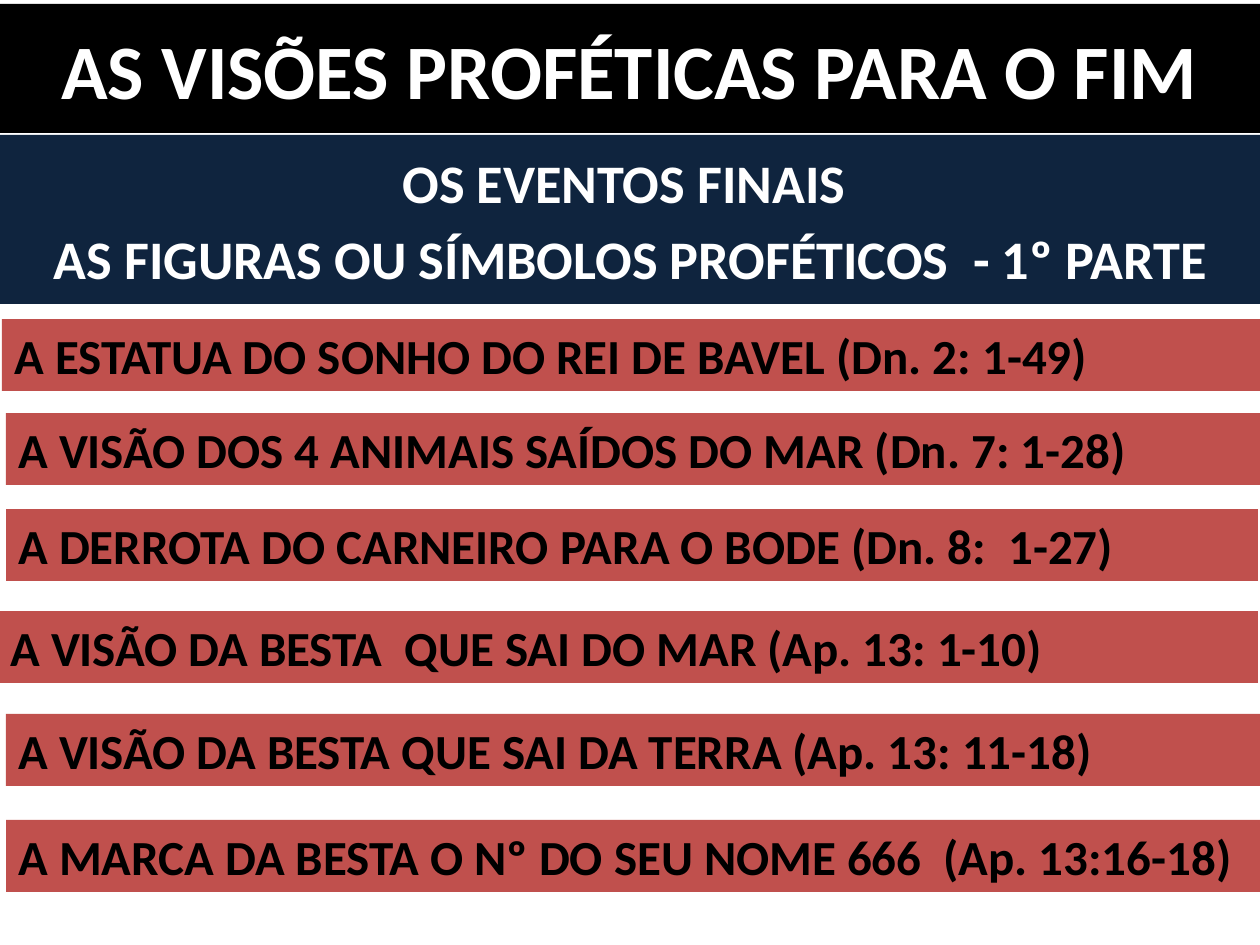
from dataclasses import dataclass

from pptx import Presentation
from pptx.dml.color import RGBColor as RGB
from pptx.enum.shapes import MSO_SHAPE as SHAPE
from pptx.enum.text import MSO_ANCHOR as ANCHOR, MSO_AUTO_SIZE as FIT, PP_ALIGN as ALIGN
from pptx.util import Emu, Pt

EMU_PER_PX = 914400 / 126
WIDTH, HEIGHT = 1260, 945


def px(n):
    """Turn whole px into EMU."""
    return Emu(round(n * EMU_PER_PX))


@dataclass(frozen=True)
class Theme:
    """Colours, font and type sizes of the slide."""
    font: str = "Calibri"
    black: RGB = RGB(0, 0, 0)
    white: RGB = RGB(255, 255, 255)
    navy: RGB = RGB(0x0F, 0x24, 0x3E)
    red: RGB = RGB(0xC0, 0x50, 0x4D)
    title: int = 44
    subtitle: int = 31
    item: int = 28


class Deck:
    """Holds the theme and current slide and draws each kind of element."""

    def __init__(self, prs, theme):
        self.theme = theme
        self.s = prs.slides.add_slide(prs.slide_layouts[6])

    def band(self, box, fill, lines, size, color, align, anchor, before=0):
        """Add a filled rectangle with bold lines of text."""
        sp = self.s.shapes.add_shape(SHAPE.RECTANGLE, *map(px, box))
        sp.shadow.inherit = False
        sp.fill.solid()
        sp.fill.fore_color.rgb = fill
        sp.line.fill.background()
        tf = sp.text_frame
        tf.word_wrap = True
        tf.vertical_anchor = anchor
        for i, line in enumerate(lines):
            p = tf.add_paragraph() if i else tf.paragraphs[0]
            p.alignment = align
            p.space_before = Pt(before)
            r = p.add_run()
            r.text = line
            r.font.name = self.theme.font
            r.font.size = Pt(size)
            r.font.bold = True
            r.font.color.rgb = color
        return tf

    def heading(self, top, height, fill, lines, size, before=0):
        """Add a full-width centred heading."""
        self.band((0, top, WIDTH, height), fill, lines, size, self.theme.white,
                  ALIGN.CENTER, ANCHOR.MIDDLE, before)

    def item(self, left, top, width, text, align=ALIGN.JUSTIFY):
        """Add one red list bar."""
        t = self.theme
        tf = self.band((left, top, width, 72), t.red, [text], t.item, t.black,
                       align, ANCHOR.TOP)
        tf.auto_size = FIT.SHAPE_TO_FIT_TEXT


def main():
    """Build and save the slide."""
    prs = Presentation()
    prs.slide_width, prs.slide_height = px(WIDTH), px(HEIGHT)
    theme = Theme()
    deck = Deck(prs, theme)
    deck.heading(4, 129, theme.black, ["AS VISÕES PROFÉTICAS PARA O FIM"], theme.title)
    deck.heading(135, 169, theme.navy,
                 ["OS EVENTOS FINAIS ", "AS FIGURAS OU SÍMBOLOS PROFÉTICOS  - 1º PARTE"],
                 theme.subtitle, before=6)
    items = [
        (2, 319, WIDTH, "A ESTATUA DO SONHO DO REI DE BAVEL (Dn. 2: 1-49)"),
        (6, 413, WIDTH, "A VISÃO DOS 4 ANIMAIS SAÍDOS DO MAR (Dn. 7: 1-28)"),
        (-2, 611, WIDTH, "A VISÃO DA BESTA  QUE SAI DO MAR (Ap. 13: 1-10)"),
        (6, 714, WIDTH, "A VISÃO DA BESTA QUE SAI DA TERRA (Ap. 13: 11-18)"),
        (6, 820, 1254, "A MARCA DA BESTA O Nº DO SEU NOME 666  (Ap. 13:16-18)"),
        (6, 509, 1252, "A DERROTA DO CARNEIRO PARA O BODE (Dn. 8:  1-27)", ALIGN.LEFT),
    ]
    for item in items:
        deck.item(*item)
    prs.save("out.pptx")


if __name__ == "__main__":
    main()
